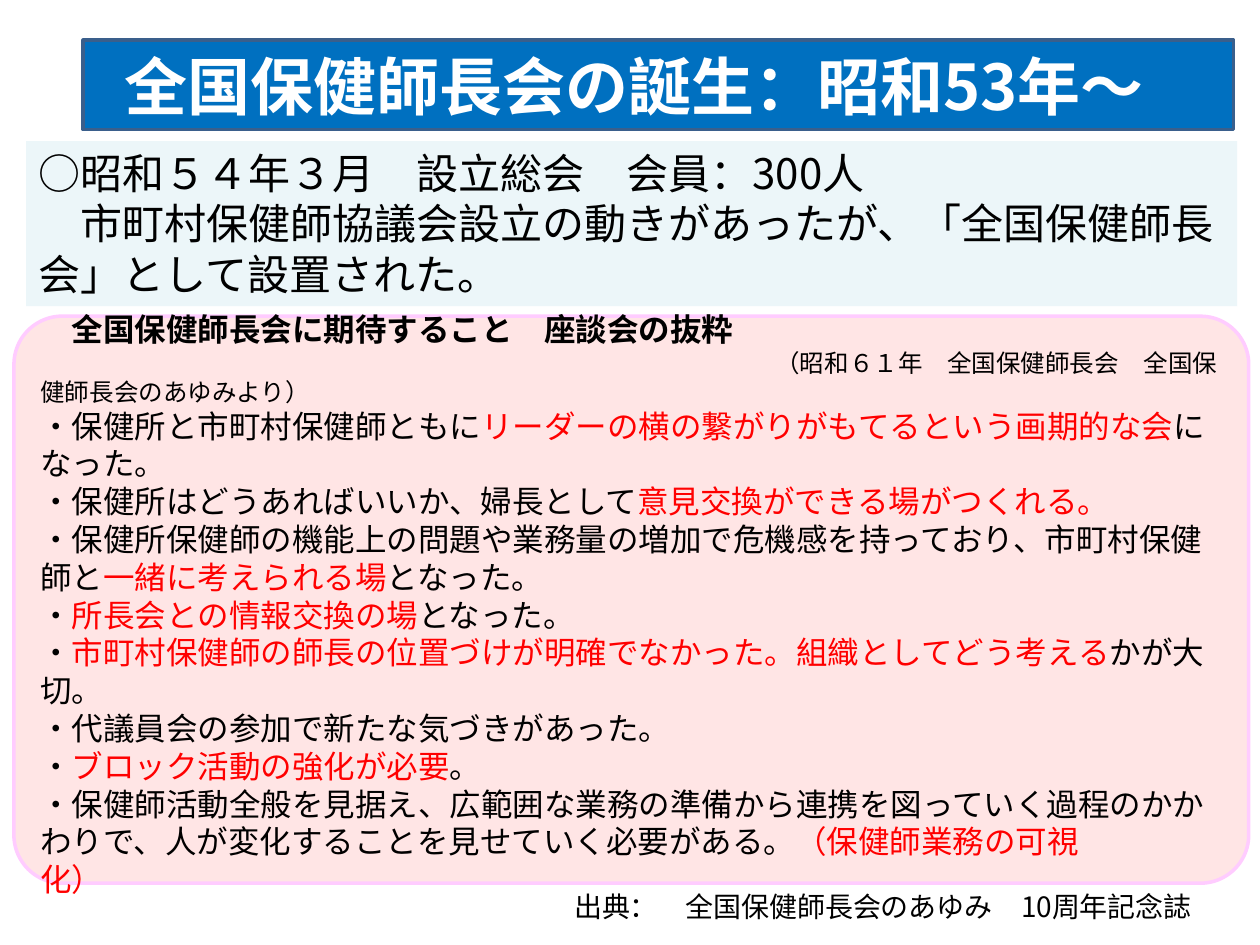
from lxml.etree import SubElement
from pptx import Presentation
from pptx.dml.color import RGBColor
from pptx.enum.shapes import MSO_SHAPE
from pptx.enum.text import MSO_ANCHOR, MSO_AUTO_SIZE, PP_ALIGN
from pptx.oxml import parse_xml
from pptx.oxml.ns import nsdecls, qn
from pptx.util import Pt

FONT = "Noto Sans CJK JP"
BLACK = RGBColor(0, 0, 0)
WHITE = RGBColor(255, 255, 255)
RED = RGBColor(255, 0, 0)
BLUE = RGBColor(0x00, 0x70, 0xC0)
NAVY = RGBColor(0x3A, 0x5F, 0x8C)
AQUA = RGBColor(0xDB, 0xEE, 0xF4)
PINK = RGBColor(0xFF, 0xCC, 0xCC)
LILAC = RGBColor(0xFF, 0xCC, 0xFF)

TITLE = "全国保健師長会の誕生：昭和53年～"
START = [
    ("○昭和５４年３月　設立総会　会員：300人", {"size": 24}),
    ("市町村保健師協議会設立の動きがあったが、「全国保健師長会」として設置された。",
     {"size": 24, "indent": 24}),
]
HEAD = [
    ("全国保健師長会に期待すること　座談会の抜粋", {"size": 18, "indent": 18, "bold": True}),
    ("（昭和６１年　全国保健師長会　全国保健師長会のあゆみより）", {"size": 14, "indent": 420}),
]
VOICES = [
    "・保健所と市町村保健師ともに|リーダーの横の繋がりがもてるという画期的な会|になった。",
    "・保健所はどうあればいいか、婦長として|意見交換ができる場がつくれる。",
    "・保健所保健師の機能上の問題や業務量の増加で危機感を持っており、市町村保健師と|一緒に考えられる場|となった。",
    "・|所長会との情報交換の場|となった。",
    "・|市町村保健師の師長の位置づけが明確でなかった。組織としてどう考える|かが大切。",
    "・代議員会の参加で新たな気づきがあった。",
    "・|ブロック活動の強化が必要|。",
    "・保健師活動全般を見据え、広範囲な業務の準備から連携を図っていく過程のかかわりで、"
    "人が変化することを見せていく必要がある。|（保健師業務の可視\n化）",
]
SOURCE = [("出典：　全国保健師長会のあゆみ　10周年記念誌", {"size": 16, "indent": 18})]


def apply(item, form):
    for key, value in form.items():
        setattr(item, key, value)


def add_run(para, text, size, color, bold):
    run = para.add_run()
    run.text = text
    apply(run.font, {"name": FONT, "size": Pt(size), "bold": bold})
    run.font.color.rgb = color
    SubElement(run.font._element, qn("a:ea")).set("typeface", FONT)


def write(shape, paras, form, align=PP_ALIGN.LEFT):
    frame = shape.text_frame
    apply(frame, {"word_wrap": True, "auto_size": MSO_AUTO_SIZE.NONE, **form})
    for i, (text, look) in enumerate(paras):
        para = frame.add_paragraph() if i else frame.paragraphs[0]
        para.alignment = align
        para._p.get_or_add_pPr().set("indent", str(Pt(look.get("indent", 0))))
        for j, part in enumerate(text.split("|")):
            color = RED if j % 2 else look.get("color", BLACK)
            for k, line in enumerate(part.split("\n")):
                if k:
                    para.add_line_break()
                add_run(para, line, look["size"], color, look.get("bold", False))


def paint(shape, fill, line=None, alpha=None):
    shape.fill.solid()
    shape.fill.fore_color.rgb = fill
    if alpha:
        tone = shape._element.spPr.find(qn("a:solidFill"))[0]
        SubElement(tone, qn("a:alpha")).set("val", str(alpha * 1000))
    if line:
        shape.line.color.rgb = line
        shape.line.width = Pt(2)
    else:
        shape.line.fill.background()
    shape.shadow.inherit = False


def place(shape, left, top, width, height):
    apply(shape, {"left": Pt(left), "top": Pt(top), "width": Pt(width), "height": Pt(height)})


deck = Presentation()
apply(deck, {"slide_width": Pt(720), "slide_height": Pt(540)})
slide = deck.slides.add_slide(deck.slide_layouts[5])
shapes = slide.shapes

title = shapes.title
place(title, 47.5, 23, 657.4, 51.1)
title._element.spPr.append(
    parse_xml(f'<a:prstGeom {nsdecls("a")} prst="roundRect"><a:avLst/></a:prstGeom>'))
paint(title, BLUE, NAVY)
write(title, [(TITLE, {"size": 36, "color": WHITE, "bold": True})],
      {"vertical_anchor": MSO_ANCHOR.MIDDLE, "margin_right": Pt(35.2)}, PP_ALIGN.CENTER)

start = shapes.add_shape(MSO_SHAPE.RECTANGLE, Pt(15), Pt(80.6), Pt(692), Pt(94.3))
paint(start, AQUA, alpha=50)
write(start, START, {"vertical_anchor": MSO_ANCHOR.TOP})

panel = shapes.add_shape(MSO_SHAPE.ROUNDED_RECTANGLE, Pt(8), Pt(180.7), Pt(705.6), Pt(324))
panel.adjustments[0] = 0.085
paint(panel, PINK, LILAC, 50)
write(panel, HEAD + [(text, {"size": 18}) for text in VOICES],
      {"vertical_anchor": MSO_ANCHOR.MIDDLE, "margin_top": Pt(5), "margin_bottom": Pt(0)})

source = shapes.add_textbox(Pt(303), Pt(504.7), Pt(417), Pt(29))
write(source, SOURCE, {"vertical_anchor": MSO_ANCHOR.TOP})

deck.save("out.pptx")
